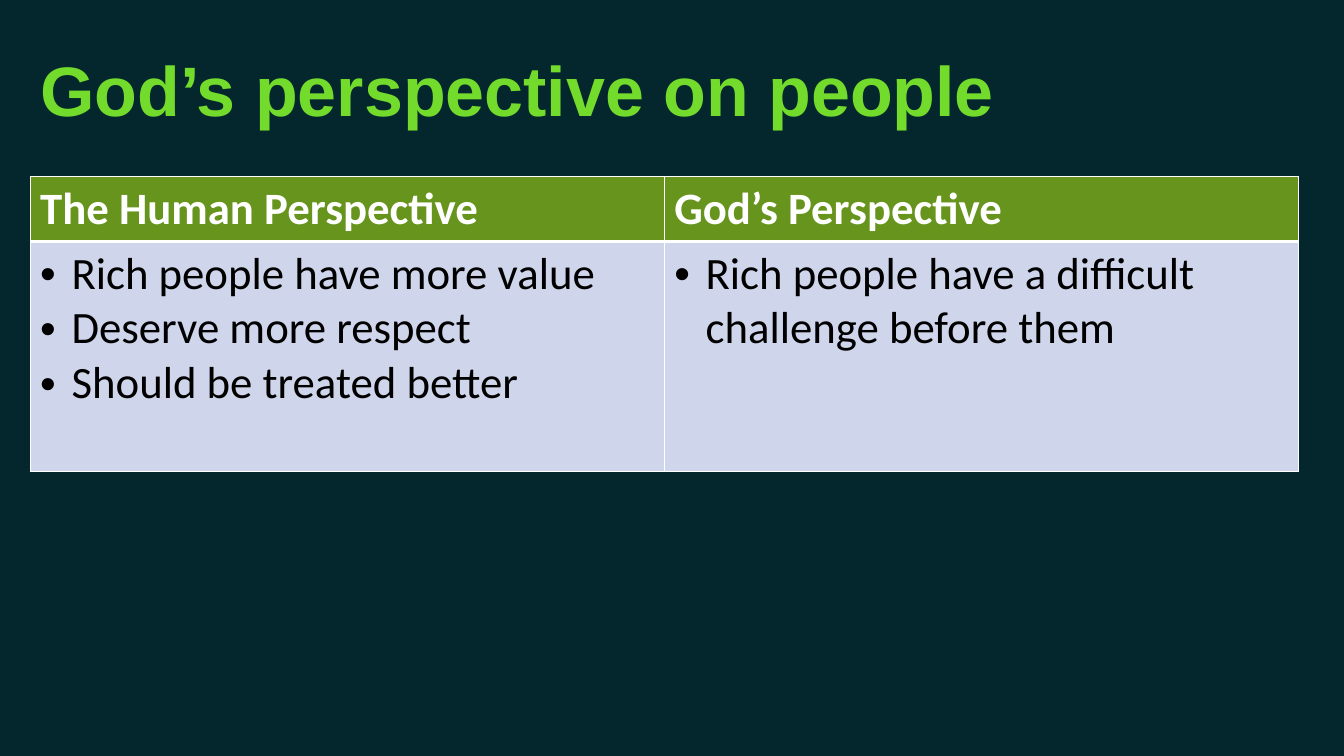
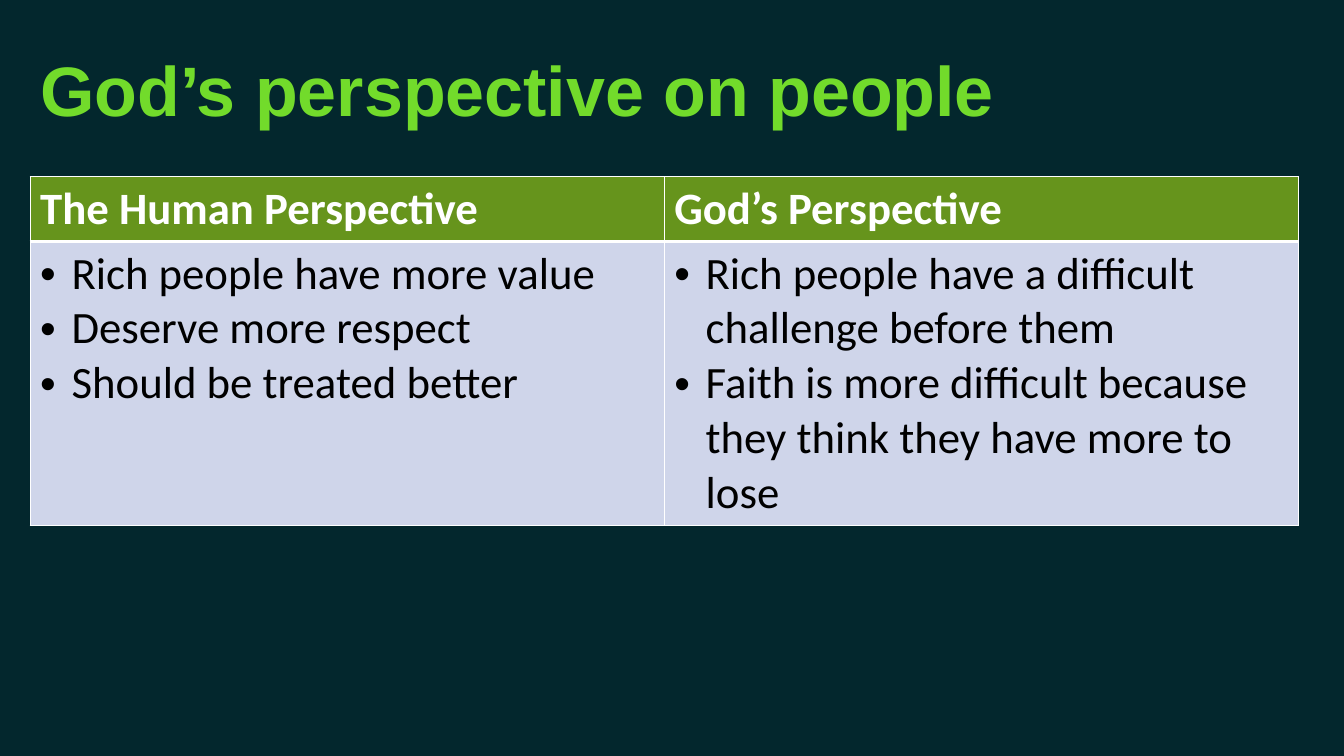
from lxml.etree import SubElement as Sub
from pptx import Presentation
from pptx.dml.color import RGBColor as Rgb
from pptx.enum.text import MSO_ANCHOR as Anchor, MSO_AUTO_SIZE as Fit, PP_ALIGN as Align
from pptx.oxml.ns import qn
from pptx.util import Cm, Pt

NIGHT = Rgb(0x03, 0x27, 0x2D)
LIME = Rgb(0x72, 0xDB, 0x2B)
GREEN = Rgb(0x66, 0x94, 0x1C)
PALE = Rgb(0xCF, 0xD5, 0xEA)
WHITE = Rgb(0xFF, 0xFF, 0xFF)
BLACK = Rgb(0x00, 0x00, 0x00)

LEFT, WIDTH = Cm(0.76), Cm(31.96)
HEAD_TALL = Cm(1.63)
TITLE = "God’s perspective on people"
HEADS = ["The Human Perspective", "God’s Perspective"]
HUMAN = ["Rich people have more value", "Deserve more respect", "Should be treated better"]
GOD = [
    "Rich people have a difficult challenge before them",
    "Faith is more difficult because they think they have more to lose",
]


def write(frame, lines, size=32, face="Calibri", color=BLACK, bold=False, bullet=None):
    """Fill a text frame with one formatted paragraph per line."""
    for i, line in enumerate(lines):
        para = frame.add_paragraph() if i else frame.paragraphs[0]
        para.alignment = Align.LEFT
        if bullet:
            props = para._p.get_or_add_pPr()
            props.set("marL", str(Cm(0.79)))
            props.set("indent", str(-Cm(0.79)))
            Sub(props, qn("a:buFont"), typeface="Arial")
            Sub(props, qn("a:buChar"), char=bullet)
        run = para.add_run()
        run.text = line
        font = run.font
        font.size, font.name, font.bold = Pt(size), face, bold
        font.color.rgb = color


def edge(cell, **widths):
    """Draw white cell borders, with widths in points by side."""
    props = cell._tc.get_or_add_tcPr()
    for side in "LRTB":
        line = Sub(props, qn(f"a:ln{side}"), w=str(Pt(widths.get(side, 1))))
        fill = Sub(line, qn("a:solidFill"))
        Sub(fill, qn("a:srgbClr"), val=str(WHITE))


def paint(cell, color):
    """Fill a cell with a solid colour."""
    cell.fill.solid()
    cell.fill.fore_color.rgb = color


def add_grid(slide, lists, tall):
    """Add the table that sets the two perspectives side by side."""
    frame = slide.shapes.add_table(2, len(HEADS), LEFT, Cm(4.45), WIDTH, HEAD_TALL + tall)
    grid = frame.table
    grid.horz_banding = False
    grid.rows[0].height, grid.rows[1].height = HEAD_TALL, tall
    for col, (head, items) in enumerate(zip(HEADS, lists)):
        top, body = grid.cell(0, col), grid.cell(1, col)
        edge(top, B=3)
        paint(top, GREEN)
        write(top.text_frame, [head], color=WHITE, bold=True)
        edge(body, T=3)
        paint(body, PALE)
        write(body.text_frame, items, bullet="•")


def set_theme(deck):
    """Set the shared backdrop and title place, and return the layout."""
    back = deck.slide_master.background.fill
    back.solid()
    back.fore_color.rgb = NIGHT
    layout = deck.slide_layouts.get_by_name("Title Only")
    title = layout.placeholders[0]
    title.left, title.top, title.width, title.height = LEFT, Cm(0.38), WIDTH, Cm(3.68)
    return layout


def add_page(deck, layout, lists, tall):
    """Add a titled slide with its table."""
    slide = deck.slides.add_slide(layout)
    frame = slide.shapes.title.text_frame
    frame.auto_size, frame.vertical_anchor = Fit.NONE, Anchor.MIDDLE
    write(frame, [TITLE], size=50, face="Arial", color=LIME, bold=True)
    add_grid(slide, lists, tall)


def main():
    """Build and save the deck."""
    deck = Presentation()
    deck.slide_width, deck.slide_height = Cm(33.87), Cm(19.05)
    layout = set_theme(deck)
    add_page(deck, layout, [HUMAN, GOD[:1]], Cm(5.8))
    add_page(deck, layout, [HUMAN, GOD], Cm(7.15))
    deck.save("out.pptx")


if __name__ == "__main__":
    main()
